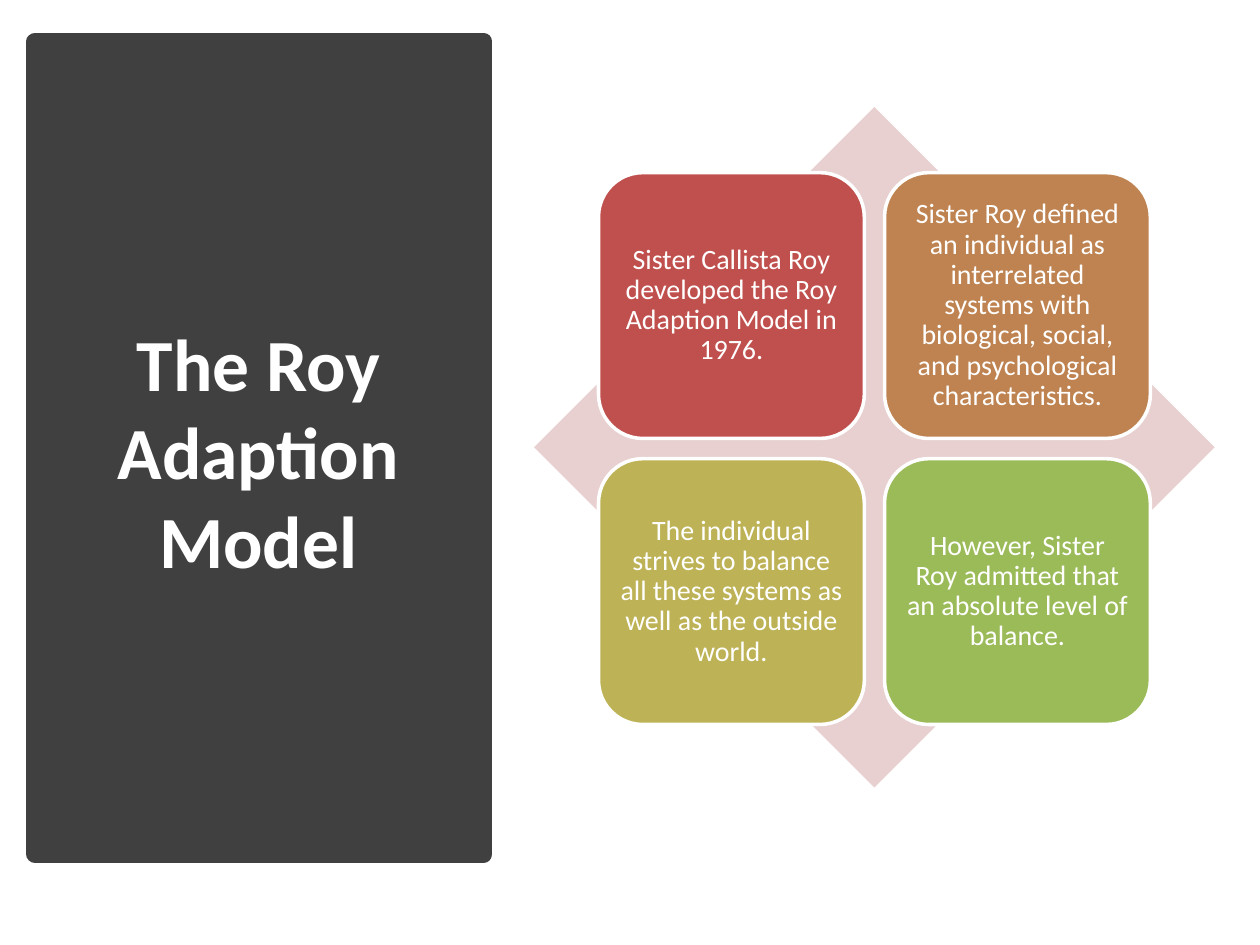
from lxml.etree import SubElement
from pptx import Presentation
from pptx.dml.color import RGBColor
from pptx.enum.shapes import MSO_SHAPE
from pptx.enum.text import MSO_ANCHOR, MSO_AUTO_SIZE, PP_ALIGN
from pptx.oxml.ns import qn
from pptx.util import Inches, Pt

TITLE = "The Roy Adaption Model"
POINTS = [
    ("Sister Callista Roy developed the Roy Adaption Model in 1976.", "red"),
    ("Sister Roy defined an individual as interrelated systems with biological, "
     "social, and psychological characteristics.", "orange"),
    ("The individual strives to balance all these systems as well as the outside world.", "olive"),
    ("However, Sister Roy admitted that an absolute level of balance.", "green"),
]
COLORS = {
    "panel": "404040", "white": "FFFFFF", "diamond": "E8D0D0",
    "red": "C0504D", "orange": "BE8351", "olive": "BDB255", "green": "9BBB59",
}
FONT = "Calibri"
CARD_LEFT, CARD_TOP = 4.75, 1.37
CARD_SIZE, CARD_STEP = 2.11, 2.27
CARD_INSET = 0.07


def color(name):
    """Return the named palette colour."""
    return RGBColor.from_string(COLORS[name])


def add_block(slide, preset, box, fill, line=None, width=0):
    """Add a flat preset shape with an optional outline."""
    block = slide.shapes.add_shape(preset, *map(Inches, box))
    block.shadow.inherit = False
    block.fill.solid()
    block.fill.fore_color.rgb = color(fill)
    if line:
        block.line.color.rgb = color(line)
        block.line.width = Pt(width)
    else:
        block.line.fill.background()
    return block


def write(frame, text, size, bold=False):
    """Put centred white text in a frame."""
    frame.text = text
    frame.word_wrap = True
    frame.auto_size = MSO_AUTO_SIZE.NONE
    frame.vertical_anchor = MSO_ANCHOR.MIDDLE
    paragraph = frame.paragraphs[0]
    paragraph.alignment = PP_ALIGN.CENTER
    font = paragraph.runs[0].font
    font.name, font.size, font.bold = FONT, Pt(size), bold
    font.color.rgb = color("white")
    return paragraph


def add_card(slide, index, text, fill):
    """Add one card of the two-by-two grid."""
    row, column = divmod(index, 2)
    box = (CARD_LEFT + column * CARD_STEP, CARD_TOP + row * CARD_STEP, CARD_SIZE, CARD_SIZE)
    card = add_block(slide, MSO_SHAPE.ROUNDED_RECTANGLE, box, fill, "white", 2)
    frame = card.text_frame
    frame.margin_left = frame.margin_right = Inches(CARD_INSET)
    frame.margin_top = frame.margin_bottom = Inches(CARD_INSET)
    write(frame, text, 16).line_spacing = 0.9


def main():
    """Build and save the slide."""
    deck = Presentation()
    deck.slide_width, deck.slide_height = Inches(10), Inches(7.5)
    slide = deck.slides.add_slide(deck.slide_layouts[5])

    panel = add_block(slide, MSO_SHAPE.RECTANGLE, (0.28, 0.33, 3.56, 6.45), "panel", "panel", 10)
    SubElement(panel.element.spPr.find(qn("a:ln")), qn("a:round"))

    title = slide.shapes.title
    title.left, title.top, title.width, title.height = map(Inches, (0.49, 0.7, 3.12, 5.75))
    write(title.text_frame, TITLE, 42, bold=True)
    title.element.addprevious(panel.element)

    add_block(slide, MSO_SHAPE.DIAMOND, (4.24, 0.85, 5.4, 5.4), "diamond")
    for index, (text, fill) in enumerate(POINTS):
        add_card(slide, index, text, fill)

    deck.save("out.pptx")


if __name__ == "__main__":
    main()
